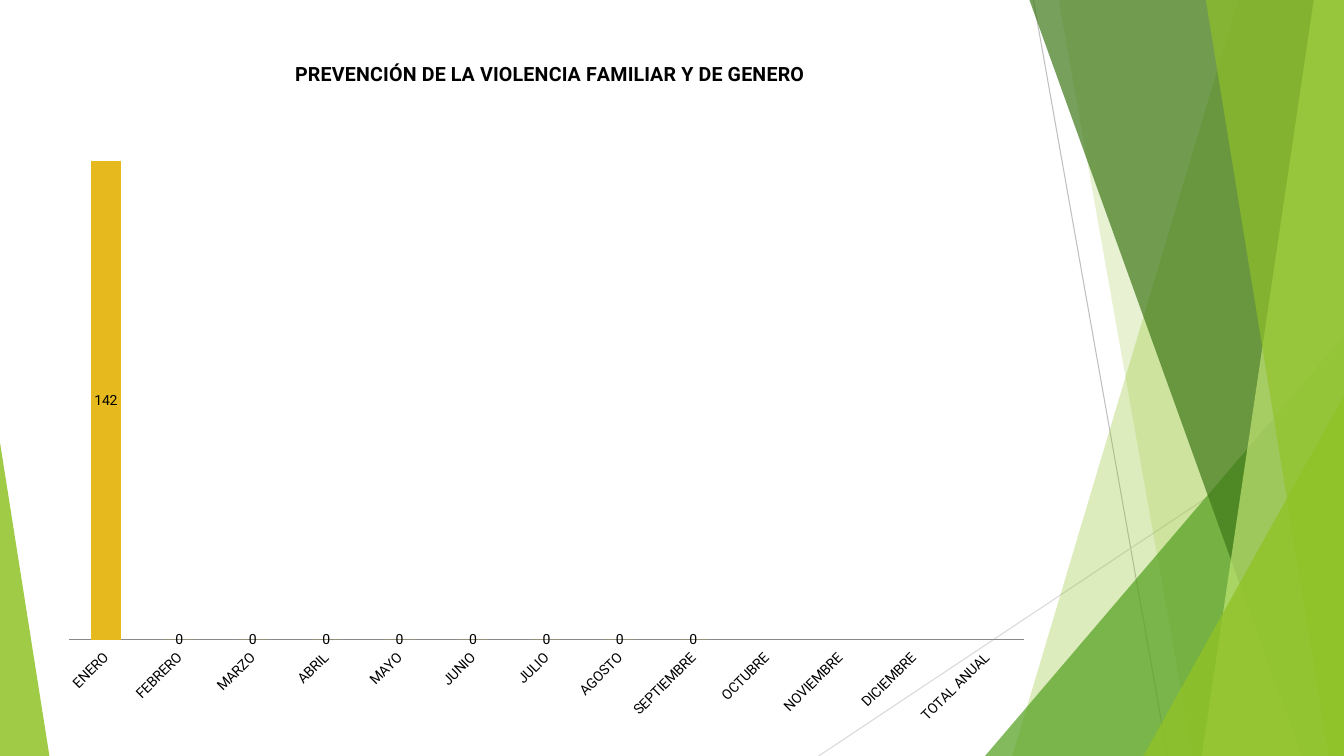
from dataclasses import dataclass

from lxml import etree
from pptx import Presentation
from pptx.chart.data import CategoryChartData
from pptx.dml.color import RGBColor
from pptx.enum.chart import XL_CHART_TYPE as ChartType, XL_LABEL_POSITION as LabelPos
from pptx.enum.chart import XL_TICK_LABEL_POSITION as TickLabelPos, XL_TICK_MARK as Tick
from pptx.enum.shapes import MSO_CONNECTOR as Connector, MSO_SHAPE as Shape
from pptx.oxml import parse_xml
from pptx.oxml.ns import nsdecls, qn
from pptx.util import Inches, Pt


@dataclass(frozen=True)
class Theme:
    """Colours, font and type sizes of the deck."""
    font: str = "Roboto"
    text: str = "000000"
    bar: str = "E6B91E"
    axis: str = "898989"
    lime: str = "90C226"
    pale: str = "C0E474"
    green: str = "54A021"
    dark: str = "3F7819"
    rule: str = "BFBFBF"
    light_rule: str = "D9D9D9"
    title_size: int = 14
    body_size: int = 10


THEME = Theme()
WIDTH, HEIGHT = 13.33, 7.5
MONTHS = ["ENERO", "FEBRERO", "MARZO", "ABRIL", "MAYO", "JUNIO", "JULIO", "AGOSTO",
          "SEPTIEMBRE", "OCTUBRE", "NOVIEMBRE", "DICIEMBRE", "TOTAL ANUAL"]
CASES = [142] + [0] * 8 + [None] * 4
TITLE = "PREVENCIÓN DE LA VIOLENCIA FAMILIAR Y DE GENERO"


def set_attrs(obj, **values):
    """Set each given attribute on an object."""
    for name, value in values.items():
        setattr(obj, name, value)


def style_font(font, size, bold=False):
    """Apply the theme font at a given size."""
    set_attrs(font, name=THEME.font, size=Pt(size), bold=bold)
    font.color.rgb = RGBColor.from_string(THEME.text)


def paint(sp, color, opacity):
    """Fill a shape with a see-through colour and no outline."""
    sp.shadow.inherit = False
    sp.fill.solid()
    sp.fill.fore_color.rgb = RGBColor.from_string(color)
    sp.line.fill.background()
    clr = sp._element.spPr.find(qn("a:solidFill"))[0]
    etree.SubElement(clr, qn("a:alpha"), val=str(opacity * 1000))


def add_rule(s, start, end, color):
    """Draw a thin straight line between two points."""
    line = s.shapes.add_connector(Connector.STRAIGHT, *map(Inches, start + end))
    line.line.color.rgb = RGBColor.from_string(color)
    line.line.width = Pt(0.75)
    etree.SubElement(line._element.spPr, qn("a:effectLst"))


def add_band(s, right, bottom, top_left, top_right, foot_left, color, opacity):
    """Draw a slanted band that fills the space up to the right edge."""
    points = [(top_left, 0), (top_right, 0), (right, 0), (right, bottom), (foot_left, bottom)]
    points = [(Inches(x), Inches(y)) for x, y in points]
    builder = s.shapes.build_freeform(*points[0], scale=1.0)
    builder.add_line_segments(points[1:], close=True)
    paint(builder.convert_to_shape(), color, opacity)


def add_wedge(s, left, width, height, bottom, apex, color, opacity):
    """Draw a right triangle standing on the bottom edge."""
    box = map(Inches, (left, bottom - height, width, height))
    sp = s.shapes.add_shape(Shape.ISOSCELES_TRIANGLE, *box)
    sp.adjustments[0] = apex
    paint(sp, color, opacity)


def add_facets(s, width, height):
    """Draw the faceted green decoration along the slide edges."""
    add_rule(s, (10.25, 0), (11.58, height), THEME.rule)
    add_rule(s, (width, 4.03), (8.12, height), THEME.light_rule)
    add_band(s, width, height, 12.28, 12.28, 10.04, THEME.lime, 30)
    add_band(s, width, height, 10.5, 10.5, 11.83, THEME.lime, 20)
    add_wedge(s, width - 3.56, 3.56, 4.17, height, 1, THEME.green, 72)
    add_band(s, width, height, 10.21, 10.21, 12.91, THEME.dark, 70)
    add_band(s, width, height, 13.03, 13.03, 11.92, THEME.pale, 70)
    add_band(s, width, height, 11.96, 11.96, 13.18, THEME.lime, 65)
    add_wedge(s, width - 1.99, 1.99, 3.57, height, 1, THEME.lime, 80)
    add_wedge(s, 0, 0.49, 3.11, height, 0, THEME.lime, 85)


def place(parent, index, **fractions):
    """Fix a chart part at fractions of the chart box."""
    for old in parent.findall(qn("c:layout")):
        parent.remove(old)
    layout = parse_xml(f"<c:layout {nsdecls('c')}><c:manualLayout/></c:layout>")
    manual = layout[0]
    if "w" in fractions:
        etree.SubElement(manual, qn("c:layoutTarget"), val="inner")
    for axis in "xy":
        etree.SubElement(manual, qn(f"c:{axis}Mode"), val="edge")
    for name, value in fractions.items():
        etree.SubElement(manual, qn(f"c:{name}"), val=str(value))
    parent.insert(index, layout)


def add_cases_chart(s, left, top, width, height):
    """Draw the monthly column chart inside the given box."""
    data = CategoryChartData()
    data.categories = MONTHS
    data.add_series("Series 1", CASES)
    box = map(Inches, (left, top, width, height))
    chart = s.shapes.add_chart(ChartType.COLUMN_STACKED, *box, data).chart
    set_attrs(chart, has_legend=False, has_title=True)
    style_font(chart.font, THEME.body_size)

    p = chart.chart_title.text_frame.paragraphs[0]
    r = p.add_run()
    r.text = TITLE
    style_font(r.font, THEME.title_size, bold=True)
    place(chart.chart_title._element, 1, x=0.244, y=0.037)
    place(chart._chartSpace.chart.plotArea, 0, x=0.02, y=0.185, w=0.962, h=0.684)

    months = chart.category_axis
    set_attrs(months, major_tick_mark=Tick.NONE, minor_tick_mark=Tick.NONE,
              has_major_gridlines=False, tick_label_position=TickLabelPos.LOW)
    months.format.line.color.rgb = RGBColor.from_string(THEME.axis)
    style_font(months.tick_labels.font, THEME.body_size)
    months._element.find(qn("c:txPr")).find(qn("a:bodyPr")).set("rot", "-2700000")
    set_attrs(chart.value_axis, visible=False, has_major_gridlines=False,
              minimum_scale=0, maximum_scale=max(filter(None, CASES)))

    plot = chart.plots[0]
    set_attrs(plot, gap_width=150, overlap=100, vary_by_categories=False)
    bars = plot.series[0]
    bars.format.fill.solid()
    bars.format.fill.fore_color.rgb = RGBColor.from_string(THEME.bar)
    set_attrs(bars.data_labels, show_value=True, position=LabelPos.CENTER)
    style_font(bars.data_labels.font, THEME.body_size)


def main():
    """Build the slide and save it."""
    prs = Presentation()
    set_attrs(prs, slide_width=Inches(WIDTH), slide_height=Inches(HEIGHT))
    s = prs.slides.add_slide(prs.slide_layouts[6])
    add_facets(s, WIDTH, HEIGHT)
    add_cases_chart(s, 0.49, 0.31, 9.84, 6.95)
    prs.save("out.pptx")


if __name__ == "__main__":
    main()
